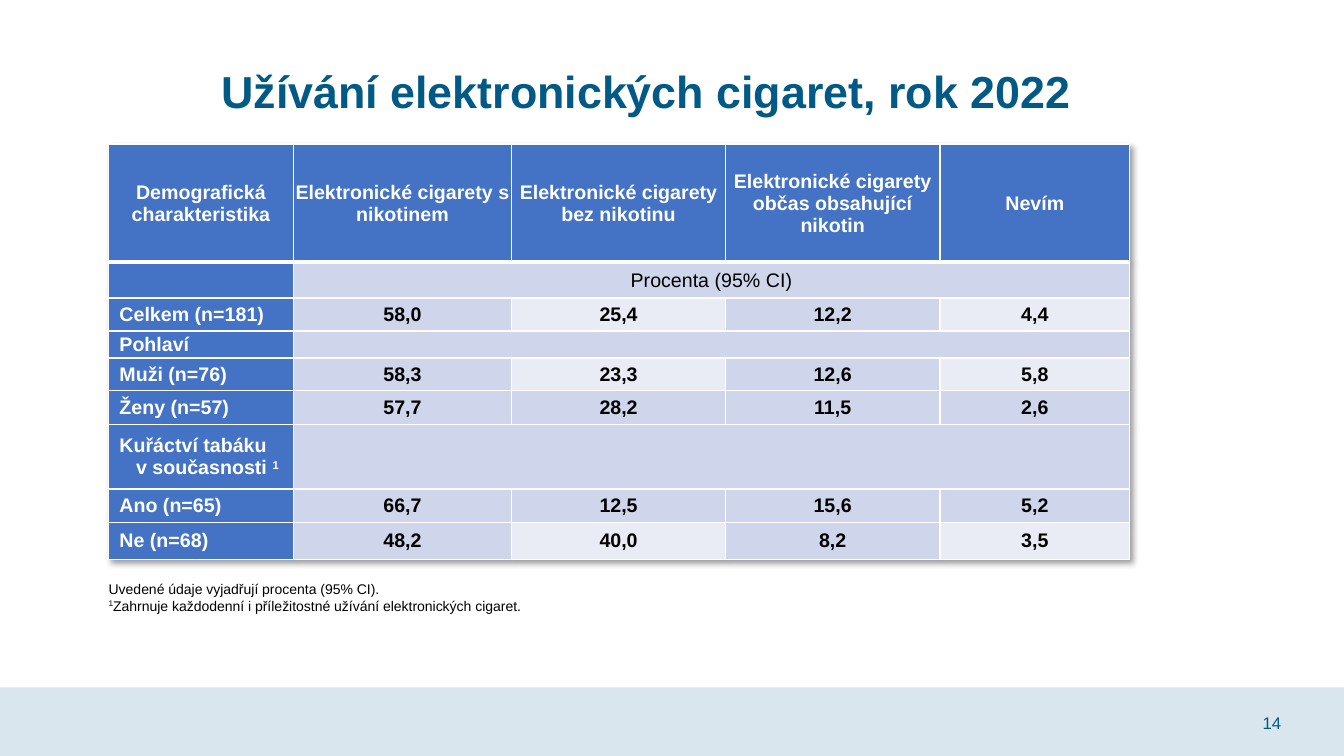
from lxml.etree import SubElement
from pptx import Presentation
from pptx.dml.color import RGBColor
from pptx.enum.shapes import MSO_SHAPE
from pptx.enum.text import MSO_ANCHOR, PP_ALIGN
from pptx.oxml.ns import qn
from pptx.util import Cm, Pt

TITLE = "Užívání elektronických cigaret, rok 2022"
HEADER = ["Demografická charakteristika", "Elektronické cigarety s nikotinem",
          "Elektronické cigarety bez nikotinu",
          "Elektronické cigarety občas obsahující nikotin", "Nevím"]
# One value in a row spans all the value columns
BODY = [
    ("", ["Procenta (95% CI)"]),
    ("Celkem (n=181)", ["58,0", "25,4", "12,2", "4,4"]),
    ("Pohlaví", [""]),
    ("Muži (n=76)", ["58,3", "23,3", "12,6", "5,8"]),
    ("Ženy (n=57)", ["57,7", "28,2", "11,5", "2,6"]),
    ("Kuřáctví tabáku\nv současnosti ^1", [""]),
    ("Ano (n=65)", ["66,7", "12,5", "15,6", "5,2"]),
    ("Ne (n=68)", ["48,2", "40,0", "8,2", "3,5"]),
]
NOTES = ["Uvedené údaje vyjadřují procenta (95% CI).",
         "^1Zahrnuje každodenní i příležitostné užívání elektronických cigaret."]
PAGE = "14"

COL_WIDTHS = [4.65, 5.51, 5.38, 5.41, 4.78]
ROW_HEIGHTS = [2.97, 0.91, 0.83, 0.68, 0.83, 0.85, 1.62, 0.84, 0.93]
TEAL, PALE, BLUE = "005A85", "D9E6EE", "4472C4"
BAND, LIGHT, WHITE, BLACK = "CFD5EA", "E9EBF5", "FFFFFF", "000000"


def rgb(color):
    return RGBColor.from_string(color)


def write(p, text, size, color, bold=False):
    """Add text to a paragraph; ^ marks a superscript digit, a newline breaks the line."""
    def add(part, raised=False):
        r = p.add_run()
        r.text = part
        r.font.name, r.font.size, r.font.bold = "Arial", Pt(size), bold
        r.font.color.rgb = rgb(color)
        if raised:
            r._r.get_or_add_rPr().set("baseline", "30000")

    for i, line in enumerate(text.split("\n")):
        if i:
            p.add_line_break()
        before, mark, after = line.partition("^")
        if before:
            add(before)
        if mark:
            add(after[0], raised=True)
            if after[1:]:
                add(after[1:])


def add_text(slide, box, lines, size, color, bold=False, anchor=MSO_ANCHOR.MIDDLE, spacing=1.0):
    tf = slide.shapes.add_textbox(*map(Cm, box)).text_frame
    tf.word_wrap, tf.vertical_anchor = True, anchor
    for i, line in enumerate(lines):
        p = tf.add_paragraph() if i else tf.paragraphs[0]
        p.line_spacing = spacing
        write(p, line, size, color, bold)


def set_borders(cell, bottom):
    tcPr = cell._tc.get_or_add_tcPr()
    widths = {"a:lnL": 1, "a:lnR": 1, "a:lnT": 1, "a:lnB": bottom}
    for i, (tag, width) in enumerate(widths.items()):
        ln = SubElement(tcPr, qn(tag), w=str(Pt(width)))
        tcPr.insert(i, ln)
        SubElement(SubElement(ln, qn("a:solidFill")), qn("a:srgbClr"), val=WHITE)


def fill_cell(cell, text, fill, color, bold, label=False, bottom=1):
    cell.fill.solid()
    cell.fill.fore_color.rgb = rgb(fill)
    cell.vertical_anchor = MSO_ANCHOR.MIDDLE
    cell.margin_left = cell.margin_right = cell.margin_top = Cm(0.02)
    cell.margin_bottom = 0
    set_borders(cell, bottom)
    p = cell.text_frame.paragraphs[0]
    if label:
        hang = 0.42 if "\n" in text else 0
        pPr = p._p.get_or_add_pPr()
        pPr.set("marL", str(Cm(0.25 + hang)))
        pPr.set("indent", str(-Cm(hang)))
    else:
        p.alignment = PP_ALIGN.CENTER
    if text:
        write(p, text, 14, color, bold)
    else:
        SubElement(p._p, qn("a:endParaRPr"), sz="1400")


def add_shadow(table):
    tblPr = table._tbl.tblPr
    effects = SubElement(tblPr, qn("a:effectLst"))
    tblPr.insert(0, effects)
    shadow = SubElement(effects, qn("a:outerShdw"), blurRad=str(Pt(4)), dist=str(Pt(3)),
                        dir="2700000", algn="tl", rotWithShape="0")
    black = SubElement(shadow, qn("a:srgbClr"), val=BLACK)
    SubElement(black, qn("a:alpha"), val="40000")


def add_survey_table(slide):
    table = slide.shapes.add_table(len(ROW_HEIGHTS), len(COL_WIDTHS), Cm(2.74), Cm(3.63),
                                   Cm(sum(COL_WIDTHS)), Cm(sum(ROW_HEIGHTS))).table
    for column, width in zip(table.columns, COL_WIDTHS):
        column.width = Cm(width)
    for row, height in zip(table.rows, ROW_HEIGHTS):
        row.height = Cm(height)
    last = len(COL_WIDTHS) - 1
    for c, text in enumerate(HEADER):
        fill_cell(table.cell(0, c), text, BLUE, WHITE, True, bottom=3)
    for r, (label, values) in enumerate(BODY, start=1):
        fill_cell(table.cell(r, 0), label, BLUE, WHITE, True, label=True)
        spanning = len(values) == 1
        if spanning:
            table.cell(r, 1).merge(table.cell(r, last))
        for c in range(1, last + 1):
            text = values[c - 1] if c <= len(values) else ""
            light = not spanning and r % 2 == 0 and c % 2 == 0
            fill_cell(table.cell(r, c), text, LIGHT if light else BAND, BLACK, not spanning)
    add_shadow(table)


def main():
    prs = Presentation()
    prs.slide_width, prs.slide_height = Cm(33.87), Cm(19.05)
    slide = prs.slides.add_slide(prs.slide_layouts[6])

    footer = slide.shapes.add_shape(MSO_SHAPE.RECTANGLE, 0, Cm(17.32), prs.slide_width, Cm(1.73))
    footer.shadow.inherit = False
    footer.fill.solid()
    footer.fill.fore_color.rgb = rgb(PALE)
    footer.line.fill.background()

    add_text(slide, (31.57, 17.7, 1.17, 1.02), [PAGE], 12, TEAL)
    add_text(slide, (5.33, 0.53, 22.3, 3.68), [TITLE], 32, TEAL, bold=True, spacing=0.9)
    add_text(slide, (2.49, 14.5, 16.21, 1.12), NOTES, 10, BLACK, anchor=MSO_ANCHOR.TOP)
    add_survey_table(slide)
    prs.save("out.pptx")


if __name__ == "__main__":
    main()
